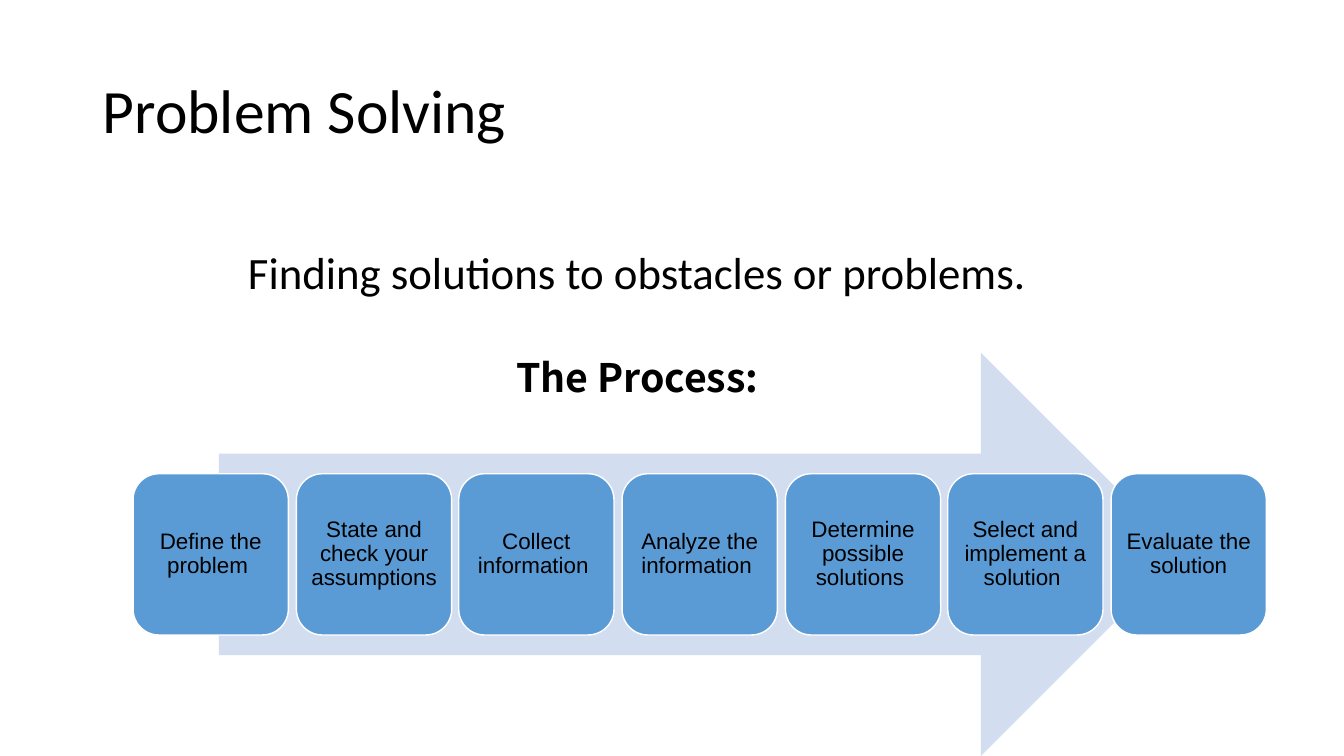
from dataclasses import dataclass

from pptx import Presentation
from pptx import util as u
from pptx.dml.color import RGBColor
from pptx.enum import shapes, text

PX = 9144  # EMU in one px, 100 px to the inch
BLACK = RGBColor(0x00, 0x00, 0x00)
WHITE = RGBColor(0xFF, 0xFF, 0xFF)
BLUE = RGBColor(0x5B, 0x9B, 0xD5)
PALE = RGBColor(0xD2, 0xDE, 0xEF)

STEPS = [
    "Define the problem ",
    "State and check your assumptions ",
    "Collect information ",
    "Analyze the information ",
    "Determine possible solutions ",
    "Select and implement a solution ",
    "Evaluate the solution",
]
PITCH = 161.7


@dataclass
class Box:
    left: int
    top: int
    width: int
    height: int

    def emu(self) -> list[int]:
        return [n * PX for n in (self.left, self.top, self.width, self.height)]


@dataclass
class Style:
    font: str
    size: int
    bold: bool = False
    align: text.PP_ALIGN = text.PP_ALIGN.CENTER


def write(para, words: str, style: Style) -> None:
    para.text = words
    para.alignment = style.align
    font = para.runs[0].font
    font.name, font.size, font.bold = style.font, u.Pt(style.size), style.bold
    font.color.rgb = BLACK


def draw(slide, kind: shapes.MSO_SHAPE, box: Box, fill: RGBColor):
    """Add a flat preset shape without an outline."""
    shape = slide.shapes.add_shape(kind, *box.emu())
    shape.shadow.inherit = False
    shape.fill.solid()
    shape.fill.fore_color.rgb = fill
    shape.line.fill.background()
    return shape


def add_step(slide, box: Box, words: str) -> None:
    shape = draw(slide, shapes.MSO_SHAPE.ROUNDED_RECTANGLE, box, BLUE)
    shape.line.color.rgb = WHITE
    shape.line.width = u.Pt(1)
    frame = shape.text_frame
    frame.word_wrap = True
    frame.vertical_anchor = text.MSO_ANCHOR.MIDDLE
    frame.margin_left = frame.margin_right = 7 * PX
    frame.margin_top = frame.margin_bottom = 7 * PX
    para = frame.paragraphs[0]
    write(para, words, Style("Arial", 16))
    para.line_spacing = 0.9


def add_title(slide, box: Box, words: str) -> None:
    title = slide.shapes.title
    title.left, title.top, title.width, title.height = box.emu()
    title.text_frame.vertical_anchor = text.MSO_ANCHOR.MIDDLE
    para = title.text_frame.paragraphs[0]
    write(para, words, Style("Calibri", 44, align=text.PP_ALIGN.LEFT))
    para.line_spacing = 0.9


def add_intro(slide, box: Box) -> None:
    frame = slide.shapes.add_textbox(*box.emu()).text_frame
    frame.word_wrap = True
    write(frame.paragraphs[0], "Finding solutions to obstacles or problems.",
          Style("Calibri", 32))
    head = frame.add_paragraph()
    write(head, "The Process:", Style("Noto Sans CJK KR", 28, bold=True))
    head.space_before = u.Pt(39)


def main() -> None:
    deck = Presentation()
    deck.slide_width, deck.slide_height = 1333 * PX, 750 * PX
    slide = deck.slides.add_slide(deck.slide_layouts[5])
    add_title(slide, Box(92, 40, 1150, 145), "Problem Solving")
    add_intro(slide, Box(230, 238, 804, 165))
    draw(slide, shapes.MSO_SHAPE.RIGHT_ARROW, Box(217, 350, 956, 400), PALE)
    for i, words in enumerate(STEPS):
        add_step(slide, Box(132 + round(i * PITCH), 470, 154, 160), words)
    deck.save("out.pptx")


if __name__ == "__main__":
    main()
